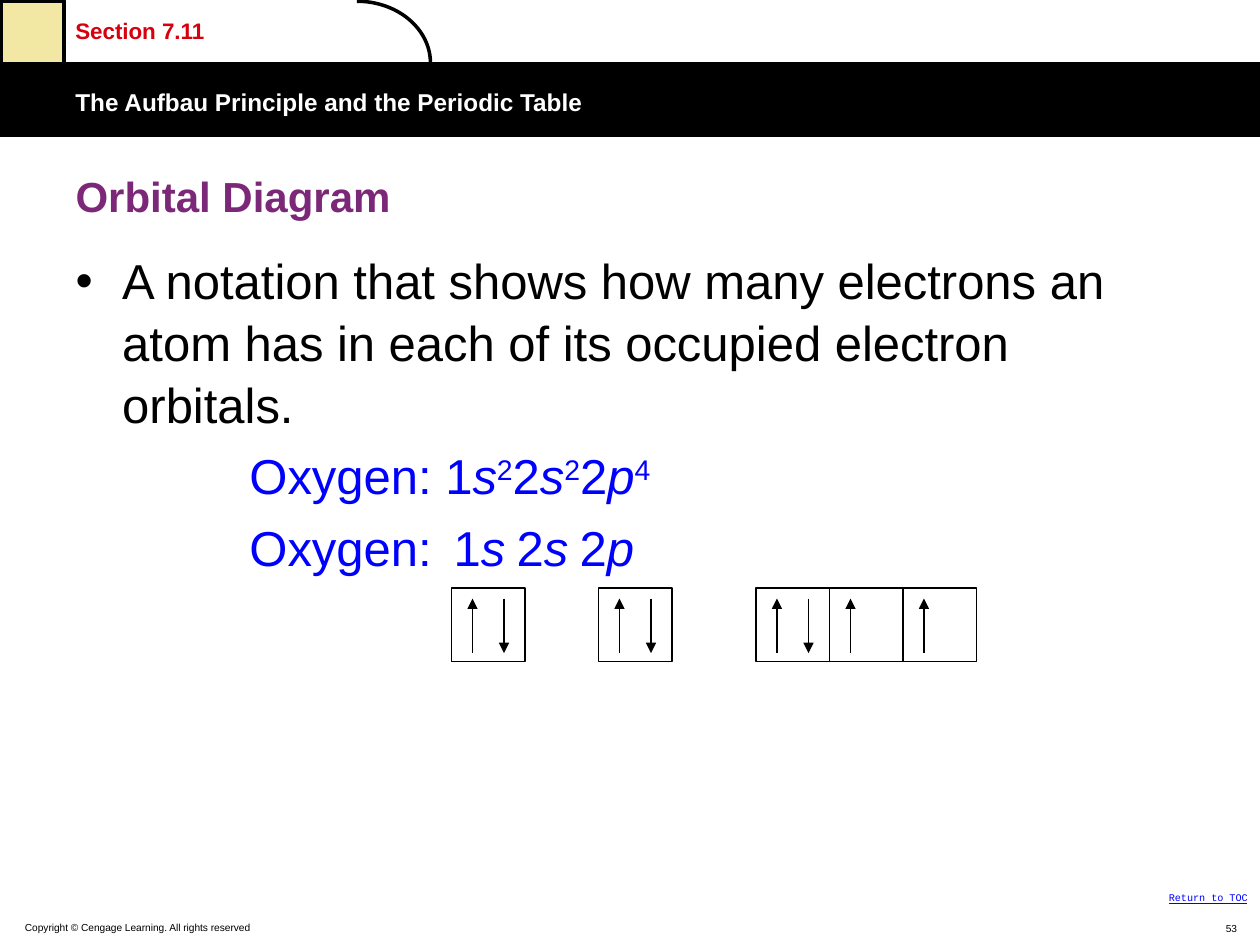
from math import cos, pi, sin

from lxml import etree
from pptx import Presentation
from pptx.dml.color import RGBColor
from pptx.enum.shapes import MSO_CONNECTOR, MSO_SHAPE
from pptx.enum.text import MSO_ANCHOR, MSO_AUTO_SIZE, PP_ALIGN
from pptx.oxml.ns import qn
from pptx.util import Inches, Pt

RECTANGLE = MSO_SHAPE.RECTANGLE
STRAIGHT = MSO_CONNECTOR.STRAIGHT
TOP, MIDDLE = MSO_ANCHOR.TOP, MSO_ANCHOR.MIDDLE
LEFT, RIGHT = PP_ALIGN.LEFT, PP_ALIGN.RIGHT
NO_AUTOFIT = MSO_AUTO_SIZE.NONE

BLACK = RGBColor(0x00, 0x00, 0x00)
WHITE = RGBColor(0xFF, 0xFF, 0xFF)
CREAM = RGBColor(0xF3, 0xE8, 0xA3)
RED = RGBColor(0xD6, 0x00, 0x0E)
PURPLE = RGBColor(0x7C, 0x28, 0x78)
BLUE = RGBColor(0x00, 0x00, 0xFF)

COLUMNS, ROWS = 120, 90
CELL = Inches(10) / COLUMNS
BOX = 7
BOX_ROW = 56

ITALIC = {"italic": True}
RAISED = {"raised": True}


def grid(*values):
    return [round(value * CELL) for value in values]


class SlideBuilder:
    font = {"name": "Arial", "size": Pt(28), "color": BLACK}
    line_spacing = 1.05

    def __init__(self, presentation):
        self.slide = presentation.slides.add_slide(presentation.slide_layouts[1])
        self.shapes = self.slide.shapes

    def outline(self, shape, fill, width):
        shape.shadow.inherit = False
        if fill is None:
            shape.fill.background()
        else:
            shape.fill.solid()
            shape.fill.fore_color.rgb = fill
        shape.line.color.rgb = BLACK
        shape.line.width = Pt(width)

    def rectangle(self, place, fill=None, width=0.75):
        self.outline(self.shapes.add_shape(RECTANGLE, *grid(*place)), fill, width)

    def quarter_curve(self, left, top, width, height, steps=24):
        angles = [step * pi / 2 / steps for step in range(steps + 1)]
        points = [grid(left + width * sin(a), top + height * (1 - cos(a))) for a in angles]
        builder = self.shapes.build_freeform(*points[0])
        builder.add_line_segments(points[1:], close=False)
        self.outline(builder.convert_to_shape(), None, 2)

    def arrow(self, column, start_row, end_row):
        connector = self.shapes.add_connector(STRAIGHT, *grid(column, start_row, column, end_row))
        connector.line.color.rgb = BLACK
        connector.line.width = Pt(0.75)
        etree.SubElement(connector.line._get_or_add_ln(), qn("a:tailEnd"), type="triangle")
        etree.SubElement(connector._element.spPr, qn("a:effectLst"))

    def orbital(self, column, electrons):
        self.rectangle((column, BOX_ROW, BOX, BOX))
        top, bottom = BOX_ROW + 1, BOX_ROW + 6.2
        spins = [(2, bottom, top), (5, top, bottom)]
        for offset, start, end in spins[:electrons]:
            self.arrow(column + offset, start, end)

    def frame(self, shape, place, anchor=TOP):
        shape.left, shape.top, shape.width, shape.height = grid(*place)
        settings = {"word_wrap": True, "auto_size": NO_AUTOFIT, "vertical_anchor": anchor}
        for name, value in settings.items():
            setattr(shape.text_frame, name, value)
        return shape.text_frame

    def paragraph(self, paragraph, runs, space=0, margin=0, indent=0,
                  bullet=None, tabs=(), align=LEFT, **style):
        properties = paragraph._p.get_or_add_pPr()
        properties.set("marL", str(Inches(margin)))
        properties.set("indent", str(Inches(indent)))
        if bullet:
            etree.SubElement(properties, qn("a:buChar"), char=bullet)
        else:
            etree.SubElement(properties, qn("a:buNone"))
        if tabs:
            stops = etree.SubElement(properties, qn("a:tabLst"))
            for tab in tabs:
                etree.SubElement(stops, qn("a:tab"), pos=str(Inches(tab)), algn="l")
        settings = {"alignment": align, "line_spacing": self.line_spacing, "space_before": Pt(space)}
        for name, value in settings.items():
            setattr(paragraph, name, value)
        for text, change in runs:
            self.run(paragraph, text, {**self.font, **style, **change})

    def run(self, paragraph, text, style):
        run = paragraph.add_run()
        run.text = text
        for name, value in style.items():
            if name == "color":
                run.font.color.rgb = value
            elif name == "raised":
                run._r.get_or_add_rPr().set("baseline", "30000")
            else:
                setattr(run.font, name, value)

    def label(self, place, text, **style):
        frame = self.frame(self.shapes.add_textbox(0, 0, 0, 0), place)
        self.paragraph(frame.paragraphs[0], [(text, RAISED)], **style)

    def title(self, place, text, **style):
        frame = self.frame(self.shapes.title, place, MIDDLE)
        self.paragraph(frame.paragraphs[0], [(text, {})], **style)

    def body(self, place, paragraphs):
        frame = self.frame(self.slide.placeholders[1], place)
        for index, (runs, style) in enumerate(paragraphs):
            paragraph = frame.add_paragraph() if index else frame.paragraphs[0]
            self.paragraph(paragraph, runs, **style)


def main():
    presentation = Presentation()
    presentation.slide_width, presentation.slide_height = grid(COLUMNS, ROWS)
    builder = SlideBuilder(presentation)

    builder.rectangle((0, 6, COLUMNS, 7), BLACK)
    builder.quarter_curve(34, 0.12, 7, 5.88)
    builder.rectangle((0.12, 0.12, 6, 6), CREAM, 2)
    builder.label((6, 0.4, 34.2, 5.6), "Section 7.11", size=Pt(22), color=RED, bold=True)
    builder.label((6, 7, 114, 6.1), "The Aufbau Principle and the Periodic Table",
                  size=Pt(24), color=WHITE, bold=True)
    builder.label((107, 84, 13, 2.5), "Return to TOC", size=Pt(10), color=BLUE,
                  name="Courier New", underline=True, align=RIGHT)
    builder.label((1.2, 86.9, 77, 3), "Copyright © Cengage Learning. All rights reserved", size=Pt(10))
    builder.label((87, 87, 32, 3), "53", size=Pt(10), align=RIGHT)

    builder.title((6, 15, 108, 7), "Orbital Diagram", size=Pt(24), color=PURPLE, bold=True)
    oxygen = {"space": 5.6, "indent": 1.38, "color": BLUE}
    definition = "A notation that shows how many electrons an atom has in each of its occupied electron orbitals."
    configuration = [("Oxygen: 1", {})]
    for letter, count, following in (("s", "2", "2"), ("s", "2", "2"), ("p", "4", "")):
        configuration += [(letter, ITALIC), (count, RAISED)]
        if following:
            configuration.append((following, {}))
    headings = [("Oxygen:", {})]
    for level, letter in ("1s", "2s", "2p"):
        headings += [("\t" + level, {}), (letter, ITALIC)]
    builder.body((6, 23, 108, 31.4), [
        ([(definition, {})], {"margin": 0.37, "indent": -0.37, "bullet": "•"}),
        (configuration, oxygen),
        (headings, {**oxygen, "tabs": (3.38, 4.59, 6.46)}),
    ])

    for column, electrons in ((43, 2), (57, 2), (72, 2), (72 + BOX, 1), (72 + 2 * BOX, 1)):
        builder.orbital(column, electrons)

    presentation.save("out.pptx")


if __name__ == "__main__":
    main()
